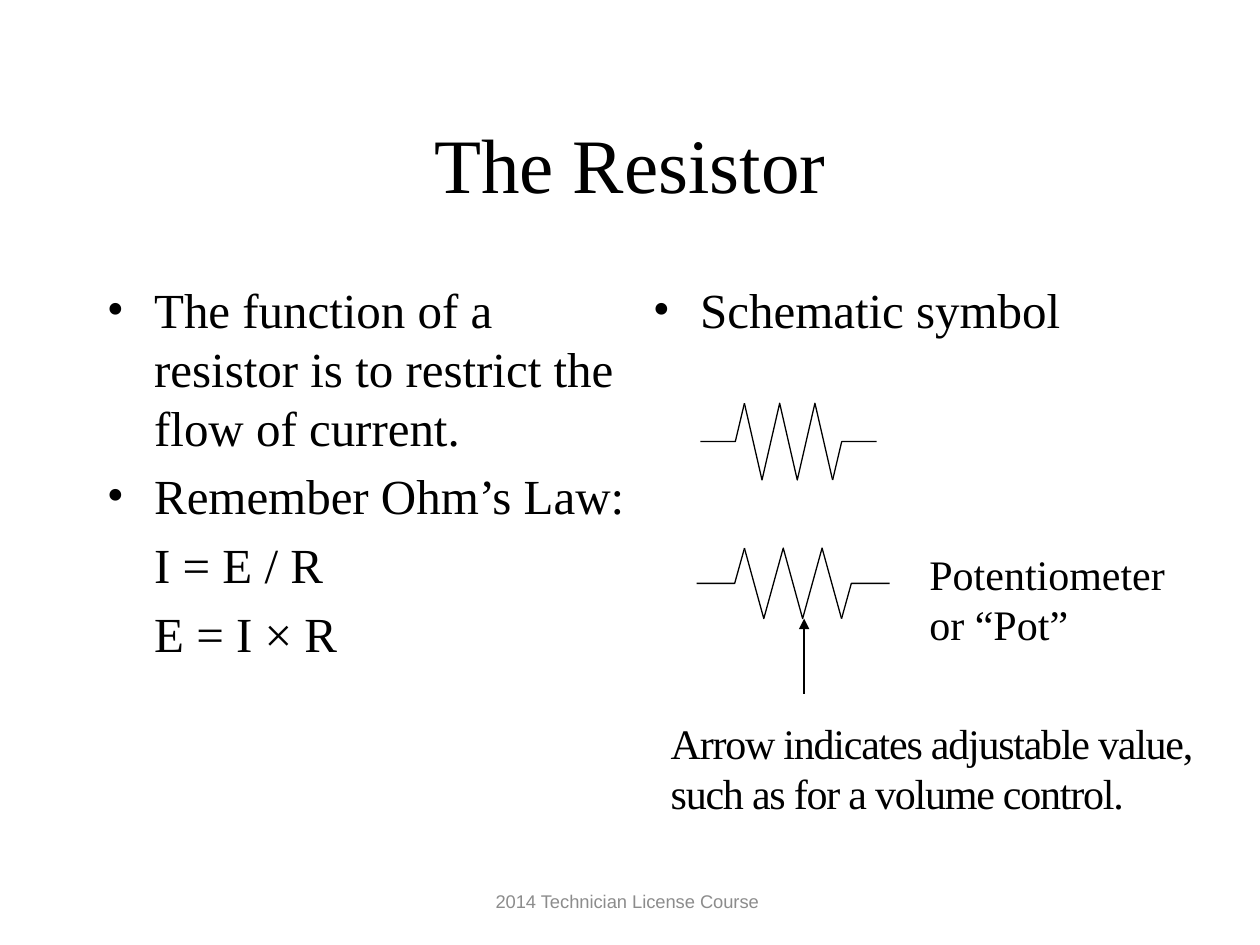
import pptx
import pptx.util
import pptx.dml.color
import pptx.enum.text
import pptx.enum.shapes
import pptx.oxml.ns
import lxml.etree

Pt = pptx.util.Pt
qn = pptx.oxml.ns.qn
ALIGN = pptx.enum.text.PP_ALIGN
ANCHOR = pptx.enum.text.MSO_ANCHOR
COLORS = {"ink": "000000", "footer": "8C8C8C"}
SERIF, SANS = "Times New Roman", "Arial"

presentation = pptx.Presentation()
presentation.slide_width, presentation.slide_height = Pt(720), Pt(540)
slide = presentation.slides.add_slide(presentation.slide_layouts[6])


def add_text(box, lines, size, font=SERIF, color="ink", align=ALIGN.LEFT,
             anchor=ANCHOR.TOP, wrap=True):
    """Add a text box with one paragraph per line and return its paragraphs."""
    frame = slide.shapes.add_textbox(*[Pt(value) for value in box]).text_frame
    frame.word_wrap = wrap
    frame.vertical_anchor = anchor
    for index, line in enumerate(lines):
        paragraph = frame.paragraphs[0] if index == 0 else frame.add_paragraph()
        paragraph.alignment = align
        run = paragraph.add_run()
        run.text = line
        run.font.name = font
        run.font.size = Pt(size)
        run.font.color.rgb = pptx.dml.color.RGBColor.from_string(COLORS[color])
    return frame.paragraphs


def style_line(shape):
    """Give a shape a thin black line."""
    shape.line.color.rgb = pptx.dml.color.RGBColor.from_string(COLORS["ink"])
    shape.line.width = Pt(0.75)


# Title
add_text((54, 48, 612, 90), ["The Resistor"], 44,
         align=ALIGN.CENTER, anchor=ANCHOR.MIDDLE)

# Two columns: bulleted points, with the formulas indented under them
columns = [
    ((54, 156.2, 312, 324), 2,
     ["The function of a resistor is to restrict the flow of current.",
      "Remember Ohm’s Law:", "I = E / R", "E = I × R"]),
    ((366, 156.2, 300, 324), 1, ["Schematic symbol"]),
]
for box, bullet_count, lines in columns:
    for index, paragraph in enumerate(add_text(box, lines, 28)):
        properties = paragraph._p.get_or_add_pPr()
        properties.set("marL", str(Pt(27)))
        if index < bullet_count:
            properties.set("indent", str(Pt(-27)))
            lxml.etree.SubElement(properties, qn("a:buFont")).set("typeface", SERIF)
            lxml.etree.SubElement(properties, qn("a:buChar")).set("char", "•")
        if index > 0:
            paragraph.space_before = Pt(5.6)

# Resistor symbols: a zigzag of six corners with a bent lead on each side
for left, lead, rise, step, top, bottom in [
    (400.2, 20, 5.2, 10.08, 230.4, 274.3),
    (398, 21.8, 5.6, 11.1, 313.2, 353.5),
]:
    group = slide.shapes.add_group_shape()
    middle = (top + bottom) / 2
    first = left + lead + rise
    last = first + 5 * step
    zigzag = [(first + number * step, bottom if number % 2 else top)
              for number in range(6)]
    left_lead = [(left, middle), (left + lead, middle), (first, top)]
    right_lead = [(last, bottom), (last + rise, middle), (last + rise + lead, middle)]
    for points in (zigzag, left_lead, right_lead):
        corners = [(Pt(x), Pt(y)) for x, y in points]
        builder = group.shapes.build_freeform(*corners[0])
        builder.add_line_segments(corners[1:], close=False)
        stroke = builder.convert_to_shape()
        stroke.shadow.inherit = False
        stroke.fill.background()
        style_line(stroke)

# Arrow pointing up at the potentiometer, the last symbol
arrow = group.shapes.add_connector(
    pptx.enum.shapes.MSO_CONNECTOR.STRAIGHT,
    Pt(459.5), Pt(353.5), Pt(459.5), Pt(396.7))
style_line(arrow)
lxml.etree.SubElement(arrow.line._get_or_add_ln(), qn("a:headEnd")).set("type", "triangle")
lxml.etree.SubElement(arrow._element.spPr, qn("a:effectLst"))

# Labels
caption = add_text(
    (376.2, 406.2, 321, 65.5),
    ["Arrow indicates adjustable value, such as for a volume control."], 24)
caption[0].runs[0].font._element.set("spc", "-70")
add_text((524, 309.6, 150.5, 65.5), ["Potentiometer", "or “Pot”"], 24, wrap=False)

# Footer
add_text((246, 500.4, 228, 28.8), ["2014 Technician License Course "], 10.5,
         SANS, "footer", ALIGN.CENTER, ANCHOR.MIDDLE)

presentation.save("out.pptx")
